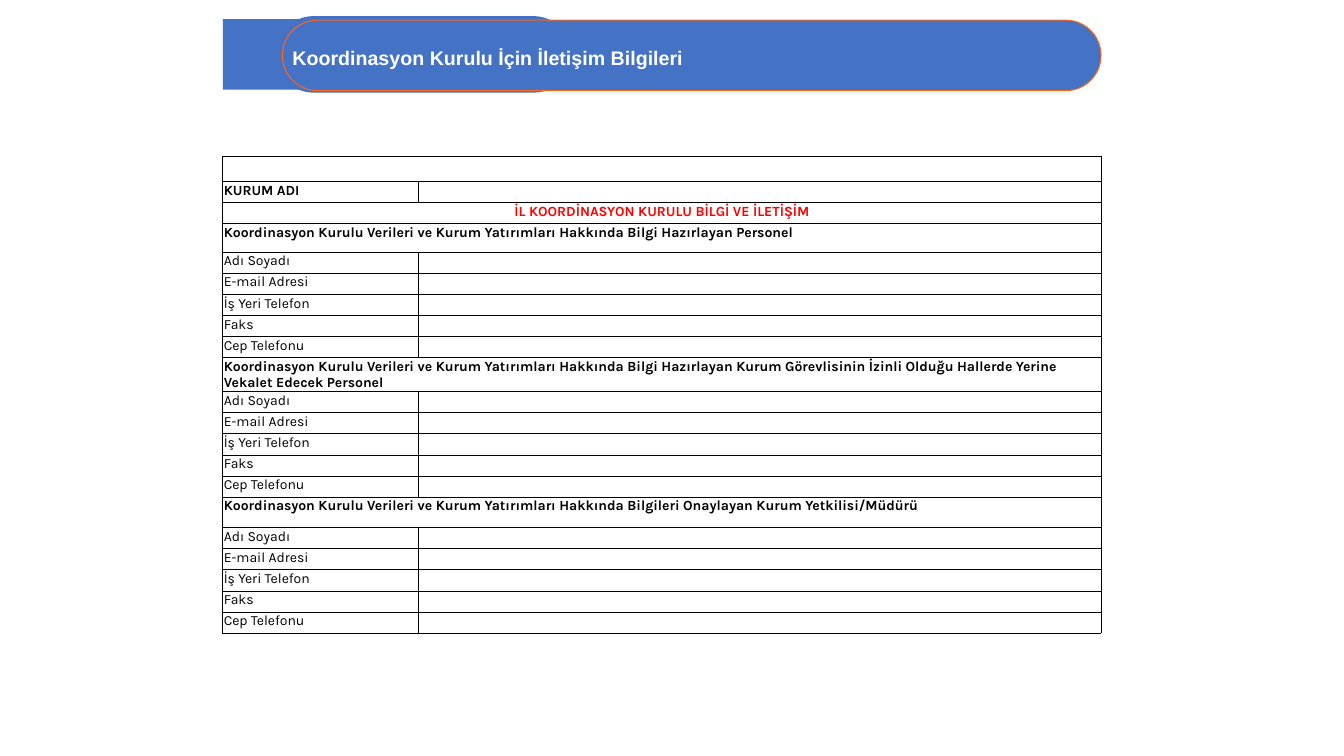
from lxml.etree import SubElement
from pptx import Presentation
from pptx.dml.color import RGBColor
from pptx.enum.shapes import MSO_SHAPE
from pptx.enum.text import MSO_ANCHOR, PP_ALIGN
from pptx.oxml import parse_xml
from pptx.oxml.ns import nsdecls, qn
from pptx.util import Inches, Pt

# Content
TITLE = "Koordinasyon Kurulu İçin İletişim Bilgileri"
INSTITUTION = "KURUM ADI"
HEADING = "İL KOORDİNASYON KURULU BİLGİ VE İLETİŞİM"
CONTACT_FIELDS = ["Adı Soyadı", "E-mail Adresi", "İş Yeri Telefon", "Faks", "Cep Telefonu"]
SECTIONS = [  # heading, row height
    ("Koordinasyon Kurulu Verileri ve Kurum Yatırımları Hakkında "
     "Bilgi Hazırlayan Personel", 0.28),
    ("Koordinasyon Kurulu Verileri ve Kurum Yatırımları Hakkında "
     "Bilgi Hazırlayan Kurum Görevlisinin İzinli Olduğu Hallerde "
     "Yerine Vekalet Edecek Personel", 0.33),
    ("Koordinasyon Kurulu Verileri ve Kurum Yatırımları Hakkında "
     "Bilgileri Onaylayan Kurum Yetkilisi/Müdürü", 0.3),
]
COLORS = {"banner": "4472C4", "outline": "FF671F", "paper": "FFFFFF",
          "ink": "000000", "alert": "FF0000"}

# Layout, in inches
SLIDE_WIDTH, SLIDE_HEIGHT = 13.33, 7.5
LEFT, TABLE_TOP = 2.21, 1.55
COLUMNS = [1.94, 6.77]
ROW = 0.21
BANNER = [  # shape, left, top, width, height, outline
    (MSO_SHAPE.RECTANGLE, LEFT, 0.19, 1.13, 0.7, None),
    (MSO_SHAPE.ROUNDED_RECTANGLE, 2.73, 0.16, 2.94, 0.76, None),
    (MSO_SHAPE.ROUNDED_RECTANGLE, 2.8, 0.2, 8.12, 0.7, "outline"),
    (MSO_SHAPE.RECTANGLE, 3.19, 0.38, 7.29, 0.34, None),
]
TITLE_BOX = (2.8, 0.41, 7.09, 0.34)


def color(name):
    return RGBColor.from_string(COLORS[name])


def write(frame, text, font="Karla", size=10, ink="ink", bold=False, align=PP_ALIGN.LEFT):
    para = frame.paragraphs[0]
    para.alignment = align
    if not text:  # keep an empty cell from growing its row
        SubElement(para._p, qn("a:endParaRPr"), sz=str(size * 100))
        return
    span = para.add_run()
    span.text = text
    span.font.name, span.font.size, span.font.bold = font, Pt(size), bold
    span.font.color.rgb = color(ink)


def add_banner(slide):
    for kind, left, top, width, height, outline in BANNER:
        shape = slide.shapes.add_shape(kind, *map(Inches, (left, top, width, height)))
        shape.shadow.inherit = False
        shape.fill.solid()
        shape.fill.fore_color.rgb = color("banner")
        if kind == MSO_SHAPE.ROUNDED_RECTANGLE:
            shape.adjustments[0] = 0.5
        if outline:
            shape.line.color.rgb = color(outline)
            shape.line.width = Pt(0.75)
        else:
            shape.line.fill.background()


def add_title(slide):
    title = slide.shapes.title
    title.left, title.top, title.width, title.height = map(Inches, TITLE_BOX)
    title.text_frame.vertical_anchor = MSO_ANCHOR.TOP
    title.text_frame.word_wrap = True
    write(title.text_frame, TITLE, font="Arial", size=14, ink="paper", bold=True)
    slide.shapes._spTree.append(title._element)  # bring in front of the banner


def format_cell(cell):
    cell.margin_left = cell.margin_right = cell.margin_top = Inches(0.01)
    cell.margin_bottom = 0
    cell.fill.solid()
    cell.fill.fore_color.rgb = color("paper")
    properties = cell._tc.get_or_add_tcPr()
    for position, side in enumerate("LRTB"):
        properties.insert(position, parse_xml(
            f'<a:ln{side} {nsdecls("a")} w="{Pt(0.5)}"><a:solidFill>'
            f'<a:srgbClr val="{COLORS["ink"]}"/></a:solidFill></a:ln{side}>'))


def table_rows():
    """Return text, height, whether the row is merged, and text format."""
    rows = [("", 0.25, True, {}),
            (INSTITUTION, ROW, False, {"bold": True}),
            (HEADING, ROW, True, {"bold": True, "ink": "alert", "align": PP_ALIGN.CENTER})]
    for heading, height in SECTIONS:
        rows.append((heading, height, True, {"bold": True}))
        rows += [(field, ROW, False, {}) for field in CONTACT_FIELDS]
    return rows


def add_contact_table(slide):
    rows = table_rows()
    size = (LEFT, TABLE_TOP, sum(COLUMNS), sum(row[1] for row in rows))
    table = slide.shapes.add_table(len(rows), len(COLUMNS), *map(Inches, size)).table
    table.first_row = table.horz_banding = False
    for column, width in zip(table.columns, COLUMNS):
        column.width = Inches(width)
    for index, (text, height, merged, style) in enumerate(rows):
        table.rows[index].height = Inches(height)
        label, entry = table.cell(index, 0), table.cell(index, 1)
        for cell in (label, entry):
            format_cell(cell)
        write(label.text_frame, text, **style)
        write(entry.text_frame, "")
        if merged:
            label.merge(entry)


def main():
    deck = Presentation()
    deck.slide_width, deck.slide_height = Inches(SLIDE_WIDTH), Inches(SLIDE_HEIGHT)
    page = deck.slides.add_slide(deck.slide_layouts[5])  # title only
    add_banner(page)
    add_title(page)
    add_contact_table(page)
    deck.save("out.pptx")


if __name__ == "__main__":
    main()
